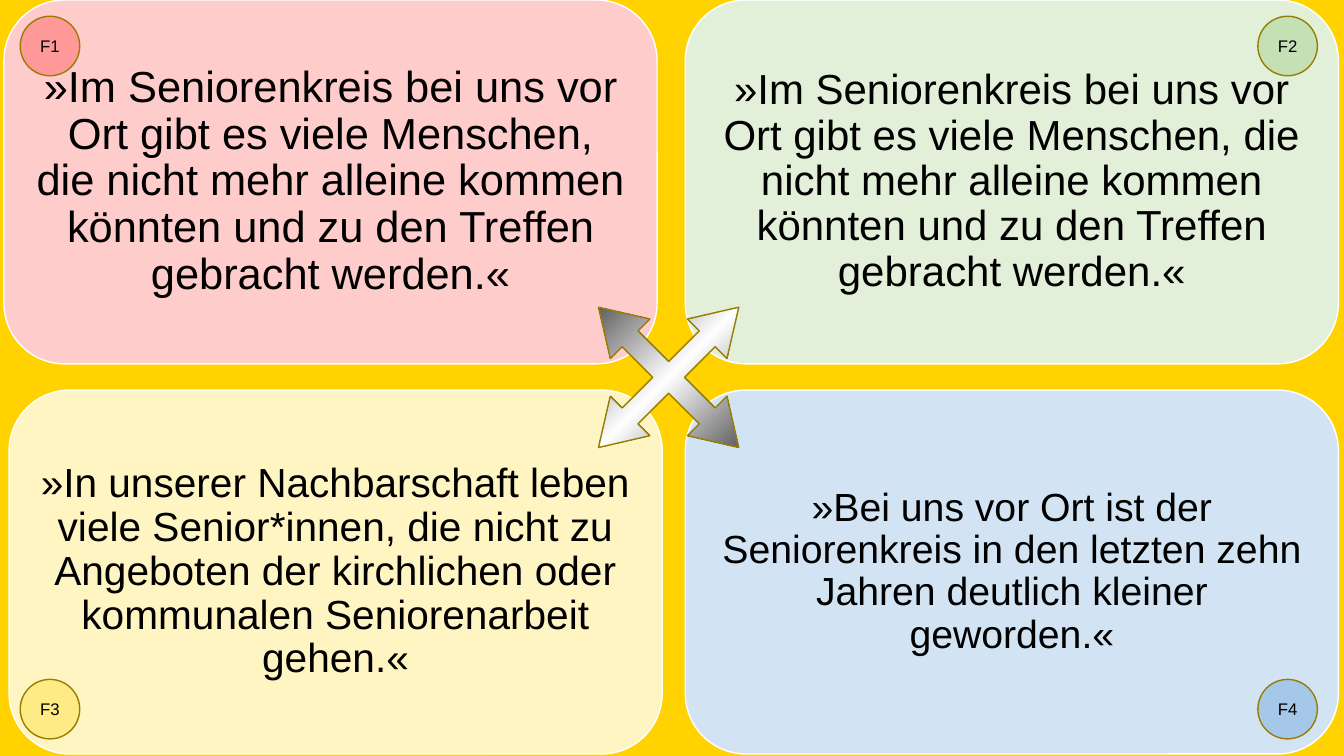
"""Build a slide with four quotations around a crossed double arrow."""
from typing import NamedTuple

from lxml import etree
from pptx import Presentation
from pptx.dml.color import RGBColor
from pptx.enum.shapes import MSO_SHAPE as Preset
from pptx.enum.text import MSO_ANCHOR as Anchor, PP_ALIGN as Align
from pptx.oxml import parse_xml
from pptx.oxml.ns import nsdecls, qn
from pptx.shapes.autoshape import Shape
from pptx.slide import Slide
from pptx.util import Cm, Pt

YELLOW = RGBColor(0xFF, 0xD2, 0x00)
OLIVE = RGBColor(0x97, 0x7E, 0x00)
WHITE = RGBColor(0xFF, 0xFF, 0xFF)
BLACK = RGBColor(0x00, 0x00, 0x00)
PINK = RGBColor(0xFF, 0xCC, 0xCC)
RED = RGBColor(0xFF, 0x99, 0x99)
PALE_GREEN = RGBColor(0xE2, 0xF0, 0xD9)
GREEN = RGBColor(0xC5, 0xE0, 0xB4)
CREAM = RGBColor(0xFF, 0xF5, 0xC2)
GOLD = RGBColor(0xFF, 0xEB, 0x85)
PALE_BLUE = RGBColor(0xD2, 0xE4, 0xF4)
BLUE = RGBColor(0xA5, 0xC8, 0xE8)

FONT = "Arial"
PANEL_WIDTH, PANEL_HEIGHT = 16.46, 9.17
PANEL_TOPS = (0, 9.83)
BADGE_SIZE = 1.5
BADGE_LEFTS = (0.51, 31.7)
BADGE_TOPS = (0.41, 17.12)
ARROW_SIZE = 5
ARROW_STOPS = ((0, BLACK), (10, BLACK), (50, WHITE), (90, BLACK), (100, BLACK))


class Box(NamedTuple):
    """Position and size in centimetres."""
    left: float
    top: float
    width: float
    height: float


class Quote(NamedTuple):
    """One quotation panel with its badge."""
    label: str
    column: int
    row: int
    left: float
    inset: float
    size: int
    fill: RGBColor
    badge_fill: RGBColor
    text: str


GROUP_TEXT = (
    "»Im Seniorenkreis bei uns vor Ort gibt es viele Menschen, die nicht mehr "
    "alleine kommen könnten und zu den Treffen gebracht werden.«"
)
QUOTES = (
    Quote("F1", 0, 0, 0.1, 0.33, 31, PINK, RED, GROUP_TEXT),
    Quote("F2", 1, 0, 17.27, 0.31, 30, PALE_GREEN, GREEN, GROUP_TEXT),
    Quote("F3", 0, 1, 0.23, 0.31, 29, CREAM, GOLD,
          "»In unserer Nachbarschaft leben viele Senior*innen, die nicht zu Angeboten "
          "der kirchlichen oder kommunalen Seniorenarbeit gehen.«"),
    Quote("F4", 1, 1, 17.27, 0.31, 28, PALE_BLUE, BLUE,
          "»Bei uns vor Ort ist der Seniorenkreis in den letzten zehn Jahren "
          "deutlich kleiner geworden.«"),
)


def add_shape(slide: Slide, preset: Preset, box: Box, fill: RGBColor, line: RGBColor) -> Shape:
    """Add a filled and outlined shape without shadow."""
    shape = slide.shapes.add_shape(preset, *(Cm(length) for length in box))
    shape.shadow.inherit = False
    shape.fill.solid()
    shape.fill.fore_color.rgb = fill
    shape.line.color.rgb = line
    shape.line.width = Pt(1)
    return shape


def write_text(shape: Shape, text: str, size: int, inset: float, spacing: float) -> None:
    """Write centred black text into a shape."""
    frame = shape.text_frame
    frame.word_wrap = True
    frame.vertical_anchor = Anchor.MIDDLE
    frame.margin_left = frame.margin_right = Cm(inset)
    frame.margin_top = frame.margin_bottom = Cm(inset)
    paragraph = frame.paragraphs[0]
    paragraph.alignment = Align.CENTER
    paragraph.line_spacing = spacing
    run = paragraph.add_run()
    run.text = text
    run.font.name = FONT
    run.font.size = Pt(size)
    run.font.color.rgb = BLACK


def add_panel(slide: Slide, quote: Quote) -> None:
    """Add the rounded panel of a quotation."""
    box = Box(quote.left, PANEL_TOPS[quote.row], PANEL_WIDTH, PANEL_HEIGHT)
    panel = add_shape(slide, Preset.ROUNDED_RECTANGLE, box, quote.fill, WHITE)
    write_text(panel, quote.text, quote.size, quote.inset, 0.9)


def add_badge(slide: Slide, quote: Quote) -> None:
    """Add the round label in the outer corner of a panel."""
    box = Box(BADGE_LEFTS[quote.column], BADGE_TOPS[quote.row], BADGE_SIZE, BADGE_SIZE)
    badge = add_shape(slide, Preset.OVAL, box, quote.badge_fill, OLIVE)
    write_text(badge, quote.label, 12, 0, 1.0)


def add_arrow(slide: Slide) -> None:
    """Add the diagonal four-way arrow with its gradient."""
    box = Box(14.35, 7.01, ARROW_SIZE, ARROW_SIZE)
    arrow = add_shape(slide, Preset.QUAD_ARROW, box, WHITE, OLIVE)
    arrow.rotation = 45
    for index, value in enumerate((0.113, 0.141, 0.225)):
        arrow.adjustments[index] = value
    gradient = parse_xml(
        f'<a:gradFill {nsdecls("a")} rotWithShape="1"><a:gsLst/><a:lin ang="0" scaled="0"/></a:gradFill>'
    )
    for percent, color in ARROW_STOPS:
        stop = etree.SubElement(gradient[0], qn("a:gs"), pos=str(percent * 1000))
        etree.SubElement(stop, qn("a:srgbClr"), val=str(color))
    properties = arrow.element.spPr
    properties.replace(properties.find(qn("a:solidFill")), gradient)


def main() -> None:
    """Build and save the presentation."""
    presentation = Presentation()
    presentation.slide_width = Cm(33.87)
    presentation.slide_height = Cm(19.05)
    slide = presentation.slides.add_slide(presentation.slide_layouts[6])
    slide.background.fill.solid()
    slide.background.fill.fore_color.rgb = YELLOW
    for quote in QUOTES:
        add_panel(slide, quote)
    add_arrow(slide)
    for quote in QUOTES:
        add_badge(slide, quote)
    presentation.save("out.pptx")


if __name__ == "__main__":
    main()
